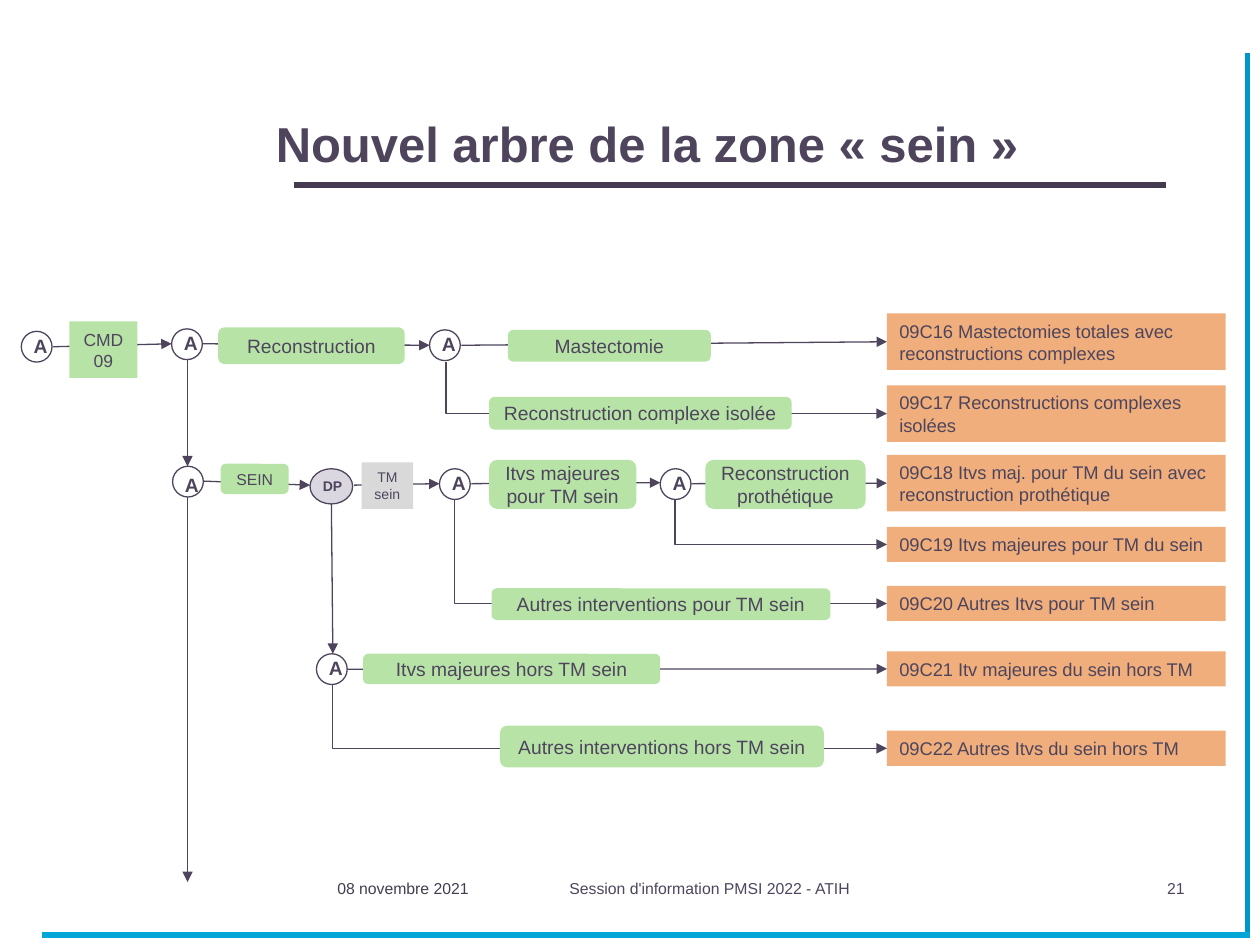
"""Build the decision-tree slide for the « sein » zone."""
from dataclasses import dataclass

from lxml import etree
from pptx import Presentation
from pptx.dml.color import RGBColor
from pptx.enum.shapes import MSO_CONNECTOR, MSO_SHAPE
from pptx.enum.text import MSO_ANCHOR, MSO_AUTO_SIZE, PP_ALIGN
from pptx.oxml.ns import qn
from pptx.util import Cm, Pt

STRAIGHT, ELBOW = MSO_CONNECTOR.STRAIGHT, MSO_CONNECTOR.ELBOW
RECTANGLE, ROUNDED, OVAL = MSO_SHAPE.RECTANGLE, MSO_SHAPE.ROUNDED_RECTANGLE, MSO_SHAPE.OVAL
LEFT, CENTER, RIGHT = PP_ALIGN.LEFT, PP_ALIGN.CENTER, PP_ALIGN.RIGHT
TOP, MIDDLE, BOTTOM = MSO_ANCHOR.TOP, MSO_ANCHOR.MIDDLE, MSO_ANCHOR.BOTTOM
NO_AUTOFIT = MSO_AUTO_SIZE.NONE
LEFT_SIDE = 1
OUTCOME_LEFT, OUTCOME_WIDTH = 17.88, 6.83


@dataclass(frozen=True)
class Theme:
    font: str = "Arial"
    ink: str = "4E455D"
    date: str = "433E4F"
    rule: str = "453B50"
    right_edge: str = "0095CB"
    bottom_edge: str = "02A7D5"
    node: str = "FFFFFF"
    diagnosis: str = "DBD7E1"
    condition: str = "B8E3A7"
    filter: str = "D9D9D9"
    outcome: str = "EFAE7B"
    title_size: float = 28
    body_size: float = 11
    outcome_size: float = 10.5
    domain_size: float = 10
    note_size: float = 9
    small_size: float = 8
    thin: float = 0.75
    thick: float = 3


THEME = Theme()


@dataclass(frozen=True)
class Box:
    text: str
    left: float
    top: float
    width: float
    height: float
    size: float = THEME.body_size
    fill: str = THEME.condition
    kind: int = ROUNDED


@dataclass(frozen=True)
class Node:
    left: float
    top: float
    width: float = 0.62
    height: float = 0.62
    label: str = "A"
    size: float = THEME.body_size
    fill: str = THEME.node
    label_shift: float = -0.08


@dataclass(frozen=True)
class Outcome:
    text: str
    top: float
    height: float
    start: tuple[float, float]
    bent: bool = False


@dataclass(frozen=True)
class Note:
    text: str
    left: float
    width: float
    color: str = THEME.ink
    align: int = LEFT


NODES = [
    Node(0.43, 6.68), Node(3.46, 6.63), Node(8.66, 6.65),
    Node(3.48, 9.4, label_shift=0), Node(8.86, 9.45), Node(13.31, 9.45), Node(6.38, 13.18),
    Node(6.25, 9.45, 0.86, 0.71, "DP", THEME.small_size, THEME.diagnosis, -0.02),
]
ARROWS = [
    (1.07, 6.99, 3.46, 6.93), (4.09, 6.93, 8.66, 6.96), (3.78, 7.26, 3.78, 9.4),
    (4.11, 9.7, 6.25, 9.78), (7.14, 9.78, 8.86, 9.75), (9.5, 9.75, 13.31, 9.73),
    (6.68, 10.13, 6.71, 13.18), (3.78, 10.01, 3.78, 17.78),
]
OUTCOMES = [
    Outcome("09C16 Mastectomies totales avec reconstructions complexes", 6.32, 1.14, (9.3, 6.96)),
    Outcome("09C17 Reconstructions complexes isolées", 7.77, 1.14, (8.99, 7.29), True),
    Outcome("09C18 Itvs maj. pour TM du sein avec reconstruction prothétique", 9.17, 1.14, (13.94, 9.75)),
    Outcome("09C19 Itvs majeures pour TM du sein", 10.62, 0.71, (13.61, 10.06), True),
    Outcome("09C20 Autres Itvs pour TM sein", 11.81, 0.71, (9.17, 10.06), True),
    Outcome("09C21 Itv majeures du sein hors TM", 13.13, 0.71, (7.01, 13.49)),
    Outcome("09C22 Autres Itvs du sein hors TM", 14.73, 0.71, (6.71, 13.79), True),
]
BOXES = [
    Box("CMD\n09", 1.4, 6.48, 1.37, 1.14, THEME.domain_size, kind=RECTANGLE),
    Box("Reconstruction", 4.4, 6.6, 3.76, 0.74),
    Box("Mastectomie", 10.24, 6.65, 4.09, 0.64),
    Box("Reconstruction complexe isolée", 9.86, 8, 6.1, 0.66),
    Box("SEIN", 4.45, 9.35, 1.37, 0.61, THEME.note_size),
    Box("TM sein", 7.29, 9.32, 1.04, 0.94, THEME.small_size, THEME.filter, RECTANGLE),
    Box("Itvs majeures pour TM sein", 9.86, 9.27, 2.97, 0.99),
    Box("Reconstruction prothétique", 14.22, 9.27, 3.23, 0.99),
    Box("Autres interventions pour TM sein", 9.91, 11.86, 6.83, 0.64),
    Box("Itvs majeures hors TM sein", 7.32, 13.18, 5.99, 0.61),
    Box("Autres interventions hors TM sein", 10.08, 14.63, 6.53, 0.84),
]
NOTES = [
    Note("08 novembre 2021", 6.55, 4.24, THEME.date),
    Note("Session d'information PMSI 2022 - ATIH", 11.23, 8.05),
    Note("21", 19.48, 4.65, align=RIGHT),
]
EDGES = [
    (25.15, 18.85, 25.15, 1.07, THEME.right_edge),
    (5.92, 3.73, 23.5, 3.73, THEME.rule),
    (0.84, 18.85, 25.2, 18.85, THEME.bottom_edge),
]


def write_text(shape, text: str, size: float, align=CENTER, anchor=MIDDLE,
               color: str = THEME.ink, bold: bool = False, inset=(0.25, 0.13)) -> None:
    """Fill a shape with formatted text."""
    frame = shape.text_frame
    frame.text = text
    frame_format = {
        "word_wrap": True, "auto_size": NO_AUTOFIT, "vertical_anchor": anchor,
        "margin_left": Cm(inset[0]), "margin_right": Cm(inset[0]),
        "margin_top": Cm(inset[1]), "margin_bottom": Cm(inset[1]),
    }
    for name, value in frame_format.items():
        setattr(frame, name, value)
    for paragraph in frame.paragraphs:
        paragraph.alignment = align
        for run in paragraph.runs:
            for name, value in {"name": THEME.font, "size": Pt(size), "bold": bold}.items():
                setattr(run.font, name, value)
            run.font.color.rgb = RGBColor.from_string(color)


def draw_shape(slide, kind, left: float, top: float, width: float, height: float, fill: str):
    """Draw a filled preset shape without outline."""
    shape = slide.shapes.add_shape(kind, Cm(left), Cm(top), Cm(width), Cm(height))
    shape.shadow.inherit = False
    shape.fill.solid()
    shape.fill.fore_color.rgb = RGBColor.from_string(fill)
    shape.line.fill.background()
    return shape


def draw_line(slide, x1: float, y1: float, x2: float, y2: float, color: str = THEME.ink,
              width: float = THEME.thin, arrow: bool = True, kind=STRAIGHT):
    """Draw a connector, with an arrowhead at its end if wanted."""
    connector = slide.shapes.add_connector(kind, Cm(x1), Cm(y1), Cm(x2), Cm(y2))
    connector.line.color.rgb = RGBColor.from_string(color)
    connector.line.width = Pt(width)
    properties = connector.element.spPr
    if arrow:
        etree.SubElement(properties.find(qn("a:ln")), qn("a:tailEnd"), type="triangle")
    etree.SubElement(properties, qn("a:effectLst"))
    return connector


def draw_elbow(slide, x1: float, y1: float, x2: float, y2: float) -> None:
    """Draw an arrow that goes down and then right."""
    across, down = x2 - x1, y2 - y1
    left, top = (x1 + x2 - down) / 2, (y1 + y2 - across) / 2
    connector = draw_line(slide, left, top, left + down, top + across, kind=ELBOW)
    properties = connector.element.spPr
    properties.find(qn("a:prstGeom")).set("prst", "bentConnector2")
    for name, value in {"rot": "16200000", "flipH": "1"}.items():
        properties.find(qn("a:xfrm")).set(name, value)


def draw_node(slide, node: Node) -> None:
    """Draw a decision node and its letter."""
    shape = draw_shape(slide, OVAL, node.left, node.top, node.width, node.height, node.fill)
    shape.line.color.rgb = RGBColor.from_string(THEME.ink)
    shape.line.width = Pt(THEME.thin)
    label = slide.shapes.add_textbox(
        Cm(node.left), Cm(node.top + node.label_shift), Cm(node.width + 0.05), Cm(0.74))
    write_text(label, node.label, node.size, bold=True)


def draw_outcome(slide, outcome: Outcome) -> None:
    """Draw an outcome box and the arrow that leads to it."""
    shape = draw_shape(slide, RECTANGLE, OUTCOME_LEFT, outcome.top, OUTCOME_WIDTH,
                       outcome.height, THEME.outcome)
    write_text(shape, outcome.text, THEME.outcome_size, LEFT)
    target = (OUTCOME_LEFT, outcome.top + outcome.height / 2)
    if outcome.bent:
        draw_elbow(slide, *outcome.start, *target)
    else:
        draw_line(slide, *outcome.start, *target).end_connect(shape, LEFT_SIDE)


def draw_box(slide, box: Box) -> None:
    """Draw a condition box."""
    shape = draw_shape(slide, box.kind, box.left, box.top, box.width, box.height, box.fill)
    write_text(shape, box.text, box.size, inset=(0.15, 0))


def main() -> None:
    """Assemble and save the presentation."""
    presentation = Presentation()
    presentation.slide_width, presentation.slide_height = Cm(25.4), Cm(19.05)
    slide = presentation.slides.add_slide(presentation.slide_layouts[5])
    title = slide.shapes.title
    position = {"left": 5.31, "top": 1.12, "width": 19.4, "height": 2.49}
    for name, value in position.items():
        setattr(title, name, Cm(value))
    write_text(title, "Nouvel arbre de la zone «\u00a0sein\u00a0»".replace("\u00a0", " "),
               THEME.title_size, LEFT, BOTTOM, bold=True)
    for *points, color in EDGES:
        draw_line(slide, *points, color, THEME.thick, arrow=False)
    for note in NOTES:
        textbox = slide.shapes.add_textbox(Cm(note.left), Cm(17.58), Cm(note.width), Cm(1.2))
        write_text(textbox, note.text, THEME.note_size, note.align, TOP, note.color)
    for outcome in OUTCOMES:
        draw_outcome(slide, outcome)
    for arrow in ARROWS:
        draw_line(slide, *arrow)
    for node in NODES:
        draw_node(slide, node)
    for box in BOXES:
        draw_box(slide, box)


    presentation.save("out.pptx")


if __name__ == "__main__":
    main()
